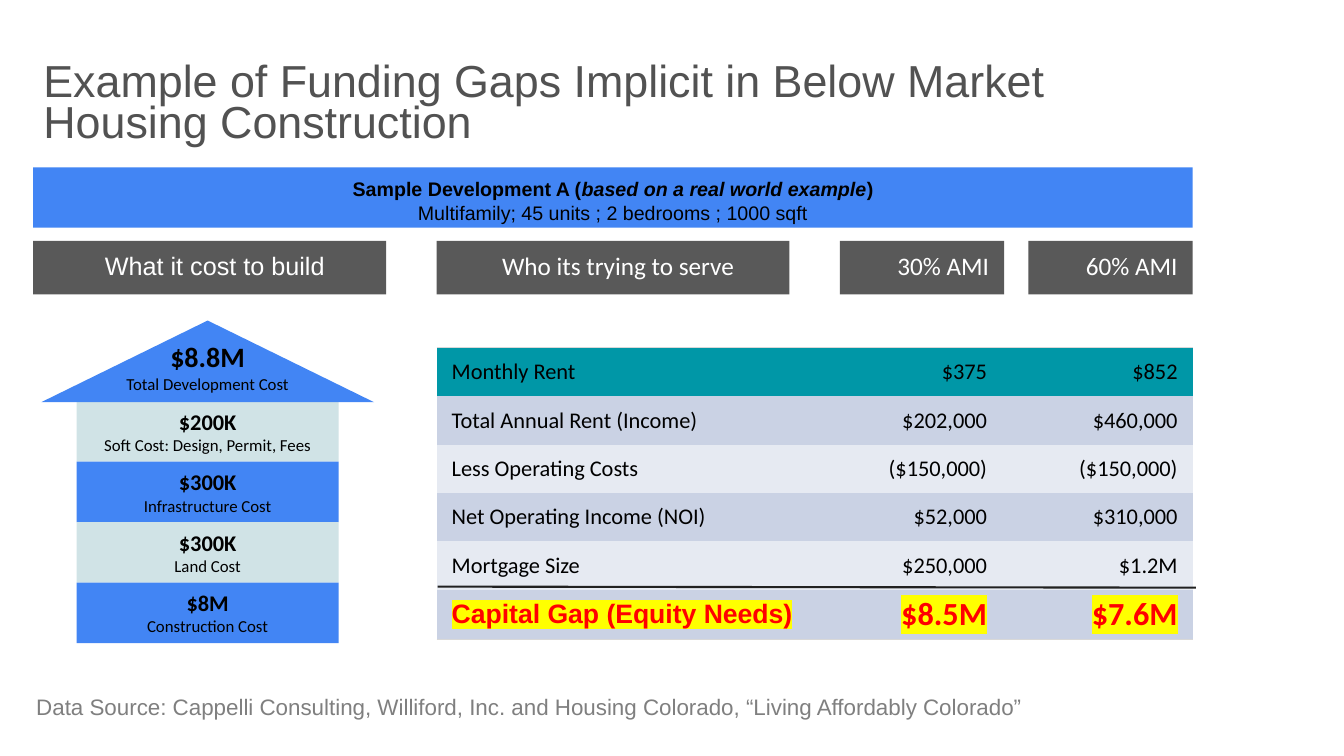
from dataclasses import dataclass

import lxml.etree
import pptx
import pptx.dml.color
import pptx.enum.shapes
import pptx.enum.text
import pptx.oxml.ns
import pptx.util

SHAPE = pptx.enum.shapes.MSO_SHAPE
ALIGN = pptx.enum.text.PP_ALIGN
ANCHOR = pptx.enum.text.MSO_ANCHOR
qn = pptx.oxml.ns.qn


@dataclass(frozen=True)
class Theme:
    sans: str = "Arial"
    body: str = "Calibri"
    ink: str = "000000"
    white: str = "FFFFFF"
    title: str = "525252"
    source: str = "7F7F7F"
    label: str = "595959"
    blue: str = "4285F4"
    mist: str = "D0E3E6"
    teal: str = "0097A7"
    bands: tuple = ("E6EAF2", "CAD2E4")
    border: str = "D8D8D8"
    rule: str = "212121"
    alert: str = "FF0000"
    marker: str = "FFFF00"
    title_size: int = 32
    gap_size: int = 23
    gap_label_size: int = 19
    roof_size: int = 20
    label_size: int = 18
    text_size: int = 16
    banner_size: int = 14
    note_size: int = 12


THEME = Theme()


def px(length):
    """100 px to the inch."""
    return pptx.util.Emu(length * 9144)


def rgb(value):
    return pptx.dml.color.RGBColor.from_string(value)


def write(paragraph, text, size=THEME.text_size, color=THEME.ink, font=THEME.body,
          bold=False, italic=False, highlight=None, align=ALIGN.LEFT, spacing=None):
    """Append one formatted run to the paragraph."""
    paragraph.alignment = align
    if spacing:
        paragraph.line_spacing = spacing
    run = paragraph.add_run()
    run.text = text
    run.font.size = pptx.util.Pt(size)
    run.font.name = font
    run.font.bold = bold
    run.font.italic = italic
    run.font.color.rgb = rgb(color)
    if highlight:
        marker = lxml.etree.Element(qn("a:highlight"))
        lxml.etree.SubElement(marker, qn("a:srgbClr"), val=highlight)
        run.font._element.find(qn("a:solidFill")).addnext(marker)


def set_frame(frame, insets=(10, 5, 10, 5), anchor=ANCHOR.MIDDLE):
    """Set the frame up and return its first paragraph."""
    frame.word_wrap = True
    frame.auto_size = pptx.enum.text.MSO_AUTO_SIZE.NONE
    frame.vertical_anchor = anchor
    (frame.margin_left, frame.margin_top,
     frame.margin_right, frame.margin_bottom) = map(px, insets)
    return frame.paragraphs[0]


def add_block(slide, box, fill, kind=SHAPE.RECTANGLE):
    block = slide.shapes.add_shape(kind, *map(px, box))
    block.shadow.inherit = False
    block.fill.solid()
    block.fill.fore_color.rgb = rgb(fill)
    block.line.fill.background()
    return block


def add_title(slide, box):
    title = slide.shapes.title
    title.left, title.top, title.width, title.height = map(px, box)
    write(set_frame(title.text_frame, anchor=ANCHOR.BOTTOM),
          "Example of Funding Gaps Implicit in Below Market Housing Construction",
          size=THEME.title_size, color=THEME.title, font=THEME.sans, spacing=0.75)


def add_banner(slide, box):
    frame = add_block(slide, box, THEME.blue).text_frame
    look = dict(size=THEME.banner_size, font=THEME.sans, align=ALIGN.CENTER)
    heading = set_frame(frame, (10, 10, 10, 10), ANCHOR.TOP)
    write(heading, "Sample Development A (", bold=True, **look)
    write(heading, "based on a real world example", bold=True, italic=True, **look)
    write(heading, ")", bold=True, **look)
    write(frame.add_paragraph(), "Multifamily; 45 units ; 2 bedrooms ; 1000 sqft", **look)


def add_headings(slide, box):
    left, top, _, height = box
    headings = [
        (0, 350, "What it cost to build", THEME.sans, ALIGN.CENTER, 10),
        (400, 350, "Who its trying to serve", THEME.body, ALIGN.CENTER, 10),
        (800, 163, "30% AMI", THEME.body, ALIGN.RIGHT, 15),
        (987, 163, "60% AMI", THEME.body, ALIGN.RIGHT, 15),
    ]
    for offset, width, text, font, align, right_inset in headings:
        label = add_block(slide, (left + offset, top, width, height), THEME.label)
        write(set_frame(label.text_frame, (20, 5, right_inset, 5)), text,
              size=THEME.label_size, color=THEME.white, font=font,
              align=align, spacing=0.9)


def add_cost(slide, box, fill, amount, name, size=THEME.text_size,
             kind=SHAPE.RECTANGLE, insets=(10, 5, 10, 5)):
    frame = add_block(slide, box, fill, kind).text_frame
    write(set_frame(frame, insets), amount, size=size, bold=True, align=ALIGN.CENTER)
    write(frame.add_paragraph(), name, size=THEME.note_size, align=ALIGN.CENTER)


def add_cost_house(slide, box):
    """Stack the cost parts as storeys under a roof with the total."""
    left, top, width, height = box
    roof_height, eave = 80, 35
    storeys = [
        ("$200K", "Soft Cost: Design, Permit, Fees"),
        ("$300K", "Infrastructure Cost"),
        ("$300K", "Land Cost"),
        ("$8M", "Construction Cost"),
    ]
    storey_height = (height - roof_height) // len(storeys)
    for level, (amount, name) in enumerate(storeys):
        storey_top = top + roof_height + level * storey_height
        add_cost(slide, (left + eave, storey_top, width - 2 * eave, storey_height),
                 (THEME.mist, THEME.blue)[level % 2], amount, name)
    add_cost(slide, (left, top, width, roof_height + 1), THEME.blue, "$8.8M",
             "Total Development Cost", size=THEME.roof_size,
             kind=SHAPE.ISOSCELES_TRIANGLE, insets=(0, 0, 0, 30))


def add_border(cell, side):
    line = lxml.etree.Element(qn(f"a:{side}"), w=str(pptx.util.Pt(1)))
    fill = lxml.etree.SubElement(line, qn("a:solidFill"))
    lxml.etree.SubElement(fill, qn("a:srgbClr"), val=THEME.border)
    cell._tc.get_or_add_tcPr().insert(0, line)


def add_gap_table(slide, box):
    left, top, width, height = box
    rows = [
        ("Monthly Rent", "$375", "$852"),
        ("Total Annual Rent (Income)", "$202,000", "$460,000"),
        ("Less Operating Costs", "($150,000)", "($150,000)"),
        ("Net Operating Income (NOI)", "$52,000", "$310,000"),
        ("Mortgage Size", "$250,000", "$1.2M"),
        ("Capital Gap (Equity Needs)", "$8.5M", "$7.6M"),
    ]
    last = len(rows) - 1
    table = slide.shapes.add_table(len(rows), 3, *map(px, box)).table
    no_style = "{2D5ABB26-0587-4C30-8999-92F81FD0307C}"
    table._tbl.tblPr.find(qn("a:tableStyleId")).text = no_style
    for column, column_width in zip(table.columns, (401, 160, 189)):
        column.width = px(column_width)
    for r, values in enumerate(rows):
        table.rows[r].height = px(height // len(rows))
        for c, value in enumerate(values):
            cell = table.cell(r, c)
            cell.vertical_anchor = ANCHOR.MIDDLE
            cell.margin_left = cell.margin_right = px(15)
            cell.margin_top = cell.margin_bottom = px(5)
            cell.fill.solid()
            cell.fill.fore_color.rgb = rgb(THEME.bands[r % 2] if r else THEME.teal)
            look = dict(align=ALIGN.RIGHT if c else ALIGN.LEFT)
            if r == last:
                look.update(size=THEME.gap_size if c else THEME.gap_label_size,
                            font=THEME.body if c else THEME.sans, bold=True,
                            color=THEME.alert, highlight=THEME.marker)
            write(cell.text_frame.paragraphs[0], value, **look)
            if r == 0:
                add_border(cell, "lnT")
            elif r == last:
                add_border(cell, "lnB")

    rule_top = top + 237
    total_rule = slide.shapes.add_connector(
        pptx.enum.shapes.MSO_CONNECTOR.STRAIGHT,
        px(left + 1), px(rule_top), px(left + width + 3), px(rule_top + 1))
    total_rule.line.color.rgb = rgb(THEME.rule)
    total_rule.line.width = pptx.util.Pt(1.5)
    lxml.etree.SubElement(total_rule._element.spPr, qn("a:effectLst"))


def add_source(slide, box):
    source = slide.shapes.add_textbox(*map(px, box))
    write(set_frame(source.text_frame, (0, 10, 10, 10)),
          "Data Source: Cappelli Consulting, Williford, Inc. and Housing Colorado, "
          "“Living Affordably Colorado”",
          color=THEME.source, font=THEME.sans, spacing=0.9)


def main():
    deck = pptx.Presentation()
    deck.slide_width, deck.slide_height = px(1333), px(750)
    slide = deck.slides.add_slide(deck.slide_layouts.get_by_name("Title Only"))
    add_title(slide, (33, 27, 1165, 123))
    add_banner(slide, (33, 166, 1150, 60))
    add_headings(slide, (33, 239, 1150, 53))
    add_cost_house(slide, (41, 318, 330, 320))
    add_gap_table(slide, (433, 345, 750, 288))
    add_source(slide, (36, 663, 1090, 79))
    deck.save("out.pptx")


if __name__ == "__main__":
    main()
